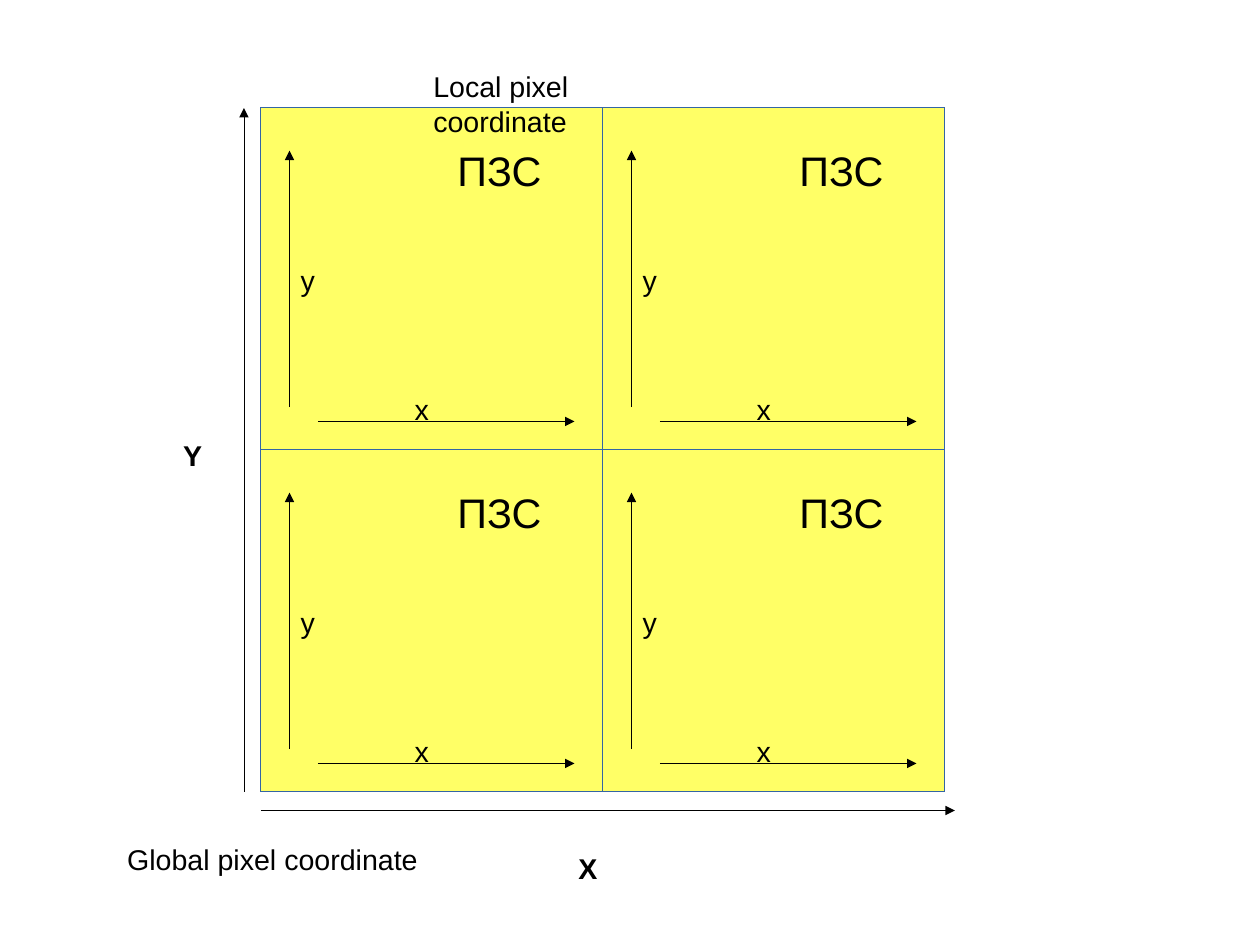
from dataclasses import dataclass
from itertools import product
from lxml.etree import SubElement as Sub
from pptx import Presentation
from pptx.dml.color import RGBColor as Rgb
from pptx.enum.shapes import MSO_CONNECTOR as Link, MSO_SHAPE as Kind
from pptx.oxml.ns import qn
from pptx.util import Cm, Pt


@dataclass(frozen=True)
class Theme:
    font: str = "Arial"
    ink: Rgb = Rgb(0, 0, 0)
    fill: Rgb = Rgb(0xFF, 0xFF, 0x66)
    edge: Rgb = Rgb(0x34, 0x65, 0xA4)
    big: int = 26
    small: int = 18


LOOK = Theme()
WIDE, HIGH = 28, 21
LEFT, TOP = 5.8, 2.4
SIDE = 12
STEP = 7.6 / SIDE

CELL_TEXT = [
    ("ПЗС", (6.5, 1.1, 4.5, 2.36), LOOK.big, False),
    ("x", (5, 9.75, 2.04, 1.52), LOOK.small, False),
    ("y", (1, 5.25, 2.04, 2.36), LOOK.small, False),
]
CELL_AXES = [(1, 10.5, 1, 1.5), (2, 11, 11, 11)]

MAIN_TEXT = [
    ("X", (10.74, 25.88, 1.44, 1.52), LOOK.small, True),
    ("Y", (-3.13, 11.38, 1.44, 1.52), LOOK.small, True),
    ("Local pixel coordinate", (5.65, -1.56, 10.46, 1.52), LOOK.small, False),
    ("Global pixel coordinate", (-5.09, 25.56, 11.7, 2.6), LOOK.small, False),
]
MAIN_AXES = [(-0.6, 24, -0.6, 0), (0, 24.65, 24.35, 24.65)]


def place(col, row):
    return Cm(LEFT + col * STEP), Cm(TOP + row * STEP)


def frame(col, row, wide, high):
    return *place(col, row), Cm(wide * STEP), Cm(high * STEP)


def hairline(shape, color):
    shape.line.color.rgb = color
    line = shape.element.spPr.find(qn("a:ln"))
    line.set("w", "0")
    return line


def write(shapes, text, box, size, bold, col, row):
    x, y, wide, high = box
    label = shapes.add_textbox(*frame(col + x, row + y, wide, high))
    label.text_frame.word_wrap = True
    para = label.text_frame.paragraphs[0]
    para.text = text
    font = para.font
    font.name, font.size, font.bold = LOOK.font, Pt(size), bold
    font.color.rgb = LOOK.ink


def arrow(shapes, ends, col, row):
    x, y, to_x, to_y = ends
    axis = shapes.add_connector(
        Link.STRAIGHT, *place(col + x, row + y), *place(col + to_x, row + to_y))
    Sub(hairline(axis, LOOK.ink), qn("a:tailEnd"), type="triangle")
    Sub(axis.element.spPr, qn("a:effectLst"))


def fill_in(shapes, axes, texts, col=0, row=0):
    for ends in axes:
        arrow(shapes, ends, col, row)
    for text, box, size, bold in texts:
        write(shapes, text, box, size, bold, col, row)


def sensor(slide, col, row):
    shapes = slide.shapes.add_group_shape().shapes
    cell = shapes.add_shape(Kind.RECTANGLE, *frame(col, row, SIDE, SIDE))
    cell.shadow.inherit = False
    cell.fill.solid()
    cell.fill.fore_color.rgb = LOOK.fill
    hairline(cell, LOOK.edge)
    fill_in(shapes, CELL_AXES, CELL_TEXT, col, row)


def main():
    deck = Presentation()
    deck.slide_width, deck.slide_height = Cm(WIDE), Cm(HIGH)
    slide = deck.slides.add_slide(deck.slide_layouts[6])
    for row, col in product((SIDE, 0), (0, SIDE)):
        sensor(slide, col, row)
    fill_in(slide.shapes, MAIN_AXES, MAIN_TEXT)
    deck.save("out.pptx")


if __name__ == "__main__":
    main()
